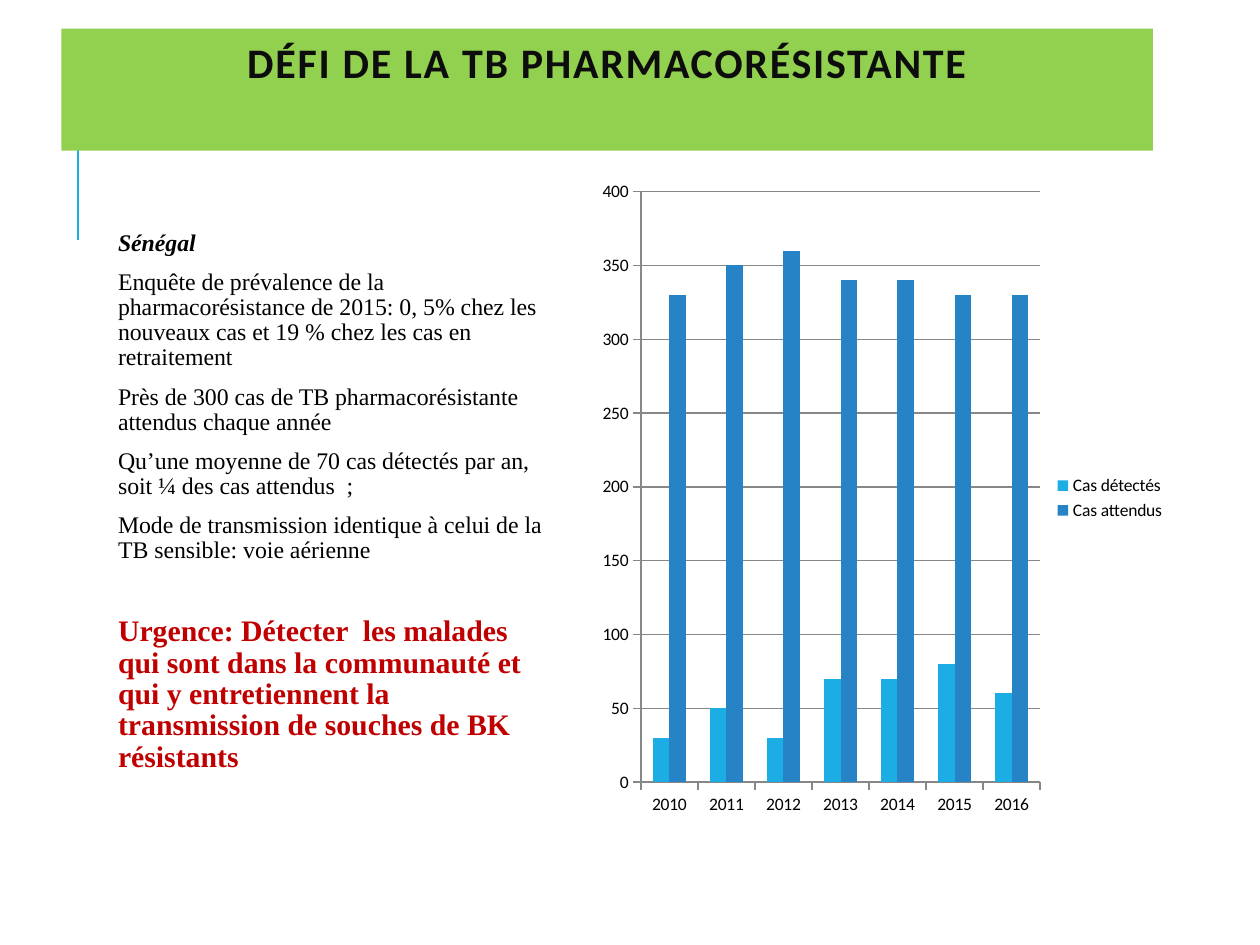
from dataclasses import dataclass

from pptx import Presentation
from pptx.chart.data import CategoryChartData
from pptx.dml.color import RGBColor
from pptx.enum.chart import XL_CHART_TYPE as ChartType
from pptx.enum.chart import XL_LEGEND_POSITION as LegendPosition
from pptx.enum.chart import XL_TICK_MARK as TickMark
from pptx.enum.shapes import MSO_CONNECTOR as ConnectorType
from pptx.enum.shapes import MSO_SHAPE as ShapeType
from pptx.enum.text import MSO_ANCHOR as Anchor
from pptx.enum.text import PP_ALIGN as Align
from pptx.oxml import parse_xml
from pptx.oxml.ns import nsdecls
from pptx.slide import Slide
from pptx.util import Cm, Pt

BLACK = RGBColor(0x00, 0x00, 0x00)
TITLE_INK = RGBColor(0x0D, 0x0D, 0x0D)
GREEN = RGBColor(0x92, 0xD0, 0x50)
RED = RGBColor(0xC0, 0x00, 0x00)
LIGHT_BLUE = RGBColor(0x1C, 0xAD, 0xE4)
BLUE = RGBColor(0x26, 0x83, 0xC6)
GREY = RGBColor(0x87, 0x87, 0x87)


@dataclass(frozen=True)
class BodyText:
    text: str
    size: float = 13.6
    color: RGBColor = BLACK
    bold: bool = False
    italic: bool = False
    space_before: float = 6


@dataclass(frozen=True)
class CaseSeries:
    name: str
    values: tuple[int, ...]
    color: RGBColor


BODY = (
    BodyText("Sénégal", bold=True, italic=True, space_before=0),
    BodyText(
        "Enquête de prévalence de la pharmacorésistance de 2015: 0, 5% chez les "
        "nouveaux cas et 19 % chez les cas en retraitement"
    ),
    BodyText("Près de 300 cas de TB pharmacorésistante attendus chaque année"),
    BodyText("Qu’une moyenne de 70 cas détectés par an, soit ¼ des cas attendus  ;"),
    BodyText("Mode de transmission identique à celui de la TB sensible: voie aérienne"),
    BodyText(
        "Urgence: Détecter  les malades qui sont dans la communauté et qui y "
        "entretiennent la transmission de souches de BK résistants",
        size=17, color=RED, bold=True, space_before=28,
    ),
)
YEARS = [str(year) for year in range(2010, 2017)]
SERIES = (
    CaseSeries("Cas détectés", (30, 50, 30, 70, 70, 80, 60), LIGHT_BLUE),
    CaseSeries("Cas attendus", (330, 350, 360, 340, 340, 330, 330), BLUE),
)


def add_accent_line(slide: Slide) -> None:
    line = slide.shapes.add_connector(
        ConnectorType.STRAIGHT, Cm(1.57), Cm(4.83), Cm(1.57), Cm(2.29)
    )
    line.line.color.rgb = LIGHT_BLUE
    line.line.width = Pt(1.5)
    line._element.spPr.append(parse_xml(f"<a:effectLst {nsdecls('a')}/>"))


def add_title(slide: Slide) -> None:
    banner = slide.shapes.add_shape(
        ShapeType.RECTANGLE, Cm(1.24), Cm(0.58), Cm(22), Cm(2.46)
    )
    banner.shadow.inherit = False
    banner.fill.solid()
    banner.fill.fore_color.rgb = GREEN
    banner.line.fill.background()
    frame = banner.text_frame
    frame.vertical_anchor = Anchor.TOP
    frame.margin_top = Cm(0.35)
    paragraph = frame.paragraphs[0]
    paragraph.alignment = Align.CENTER
    paragraph.line_spacing = 0.8
    run = paragraph.add_run()
    run.text = "DÉFI DE LA TB PHARMACORÉSISTANTE"
    run.font.name = "Calibri"
    run.font.size = Pt(24)
    run.font.bold = True
    run.font.color.rgb = TITLE_INK
    run.font._element.set("spc", "100")


def add_body(slide: Slide) -> None:
    box = slide.shapes.add_textbox(Cm(2.13), Cm(3.66), Cm(9.14), Cm(13.06))
    frame = box.text_frame
    frame.word_wrap = True
    frame.margin_top = Cm(1)
    for index, item in enumerate(BODY):
        paragraph = frame.add_paragraph() if index else frame.paragraphs[0]
        paragraph.text = item.text
        paragraph.line_spacing = 0.88
        paragraph.space_before = Pt(item.space_before)
        paragraph.space_after = Pt(2)
        font = paragraph.font
        font.name = "Times New Roman"
        font.size = Pt(item.size)
        font.bold = item.bold
        font.italic = item.italic
        font.color.rgb = item.color


def add_case_chart(slide: Slide) -> None:
    data = CategoryChartData()
    data.categories = YEARS
    for item in SERIES:
        data.add_series(item.name, item.values)
    chart = slide.shapes.add_chart(
        ChartType.COLUMN_CLUSTERED, Cm(11.91), Cm(3.4), Cm(11.84), Cm(13.28), data
    ).chart
    chart.has_title = False
    chart.font.name = "Calibri"
    chart.font.size = Pt(10)
    chart.font.color.rgb = BLACK
    chart.has_legend = True
    chart.legend.position = LegendPosition.RIGHT
    chart.legend.include_in_layout = False

    plot = chart.plots[0]
    plot.vary_by_categories = False
    plot.gap_width = 150
    plot.overlap = 0
    for series, item in zip(plot.series, SERIES):
        series.format.fill.solid()
        series.format.fill.fore_color.rgb = item.color

    value_axis = chart.value_axis
    value_axis.minimum_scale = 0
    value_axis.maximum_scale = 400
    value_axis.major_unit = 50
    value_axis.has_major_gridlines = True
    for axis in (chart.category_axis, value_axis):
        axis.major_tick_mark = TickMark.OUTSIDE
        axis.minor_tick_mark = TickMark.NONE
    for part in (chart.category_axis, value_axis, value_axis.major_gridlines):
        part.format.line.color.rgb = GREY
        part.format.line.width = Pt(0.75)


def main() -> None:
    presentation = Presentation()
    presentation.slide_width = Cm(25.4)
    presentation.slide_height = Cm(19.05)
    slide = presentation.slides.add_slide(presentation.slide_layouts[6])
    add_accent_line(slide)
    add_title(slide)
    add_body(slide)
    add_case_chart(slide)
    presentation.save("out.pptx")


if __name__ == "__main__":
    main()
